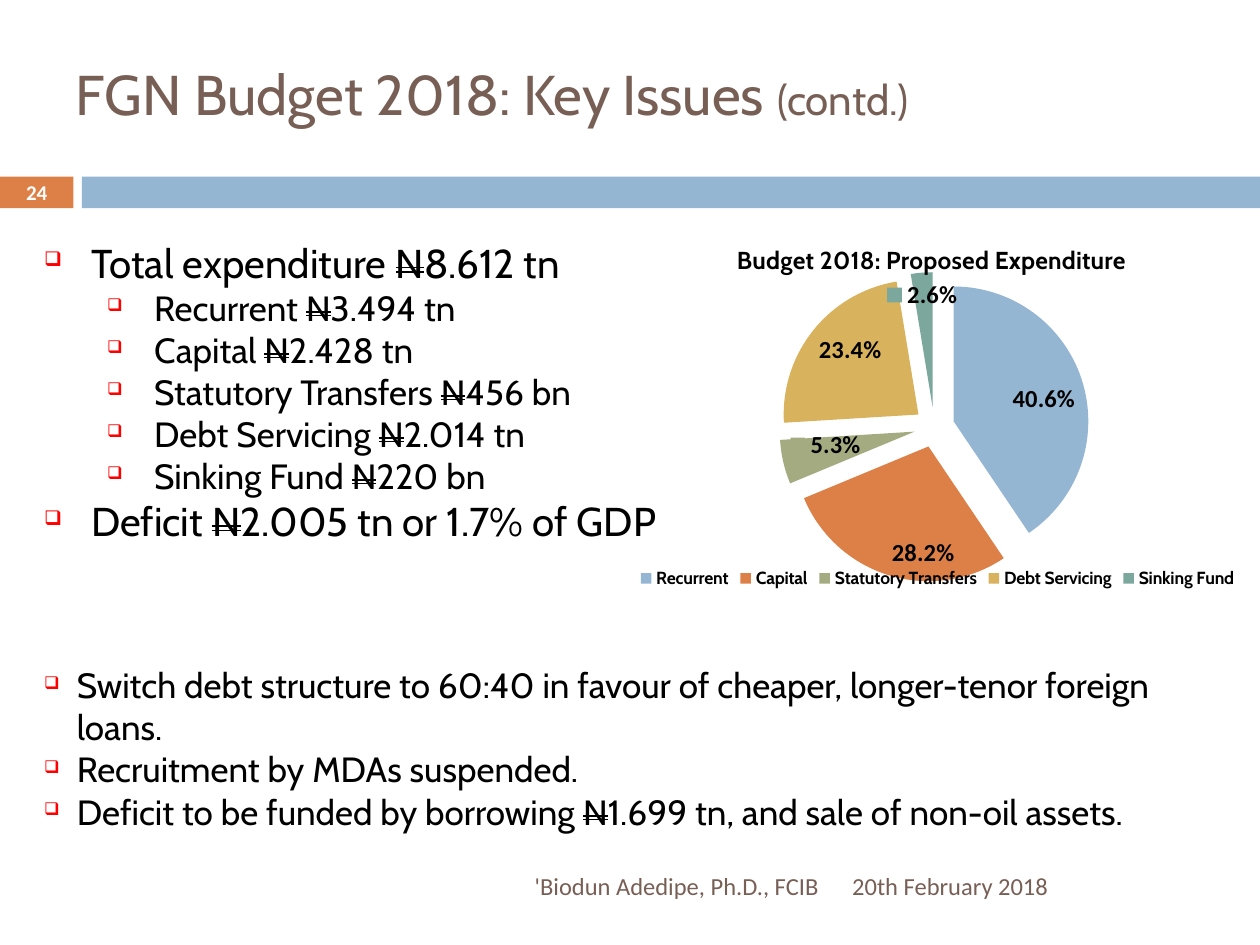
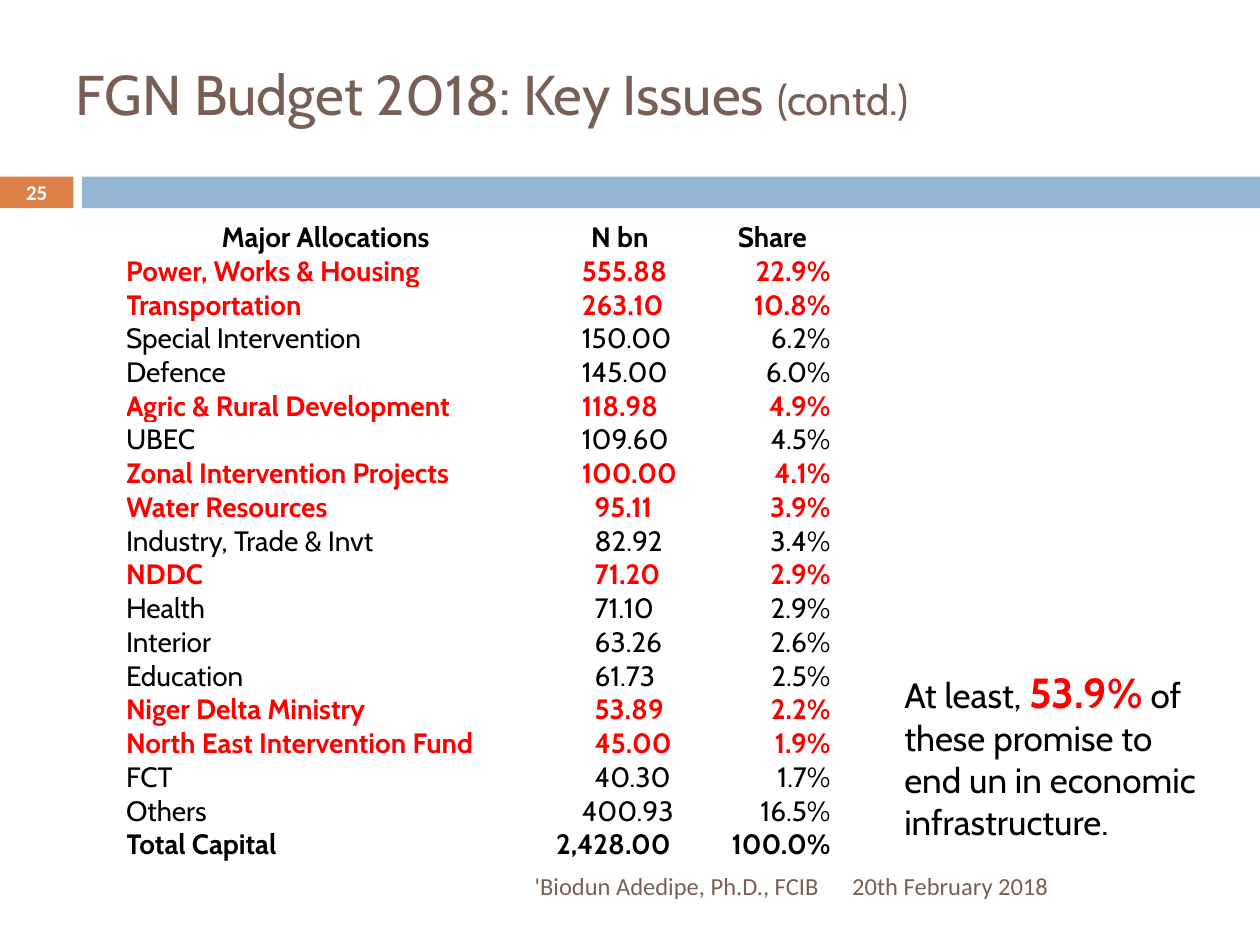
from dataclasses import dataclass

import lxml.etree
import pptx
import pptx.chart.data
import pptx.dml.color
import pptx.enum.chart
import pptx.enum.shapes
import pptx.enum.text
import pptx.oxml.ns
import pptx.util

Cm, Pt = pptx.util.Cm, pptx.util.Pt
qn = pptx.oxml.ns.qn
ALIGN, ANCHOR = pptx.enum.text.PP_ALIGN, pptx.enum.text.MSO_ANCHOR


@dataclass(frozen=True)
class Theme:
    brown: str = "775F55"
    blue: str = "94B6D2"
    orange: str = "DD8047"
    red: str = "FF0000"
    black: str = "000000"
    white: str = "FFFFFF"
    slices: tuple = ("94B6D2", "DD8047", "A5AB81", "D8B25C", "7BA79D")
    text_font: str = "Cabin"
    small_font: str = "Calibri"
    title: int = 32
    large: int = 24
    lead: int = 23
    body: int = 20
    cell: int = 16
    caption: int = 14
    number: int = 12
    legend: int = 10


THEME = Theme()

# ---- Content: a paragraph is a list of runs, a run is (text, overrides) ----
NAIRA = ("N", {"strike": "dblStrike"})
TITLE = [("FGN Budget 2018: Key Issues ", {}), ("(contd.)", {"size": THEME.large})]
AUTHOR = "'Biodun Adedipe, Ph.D., FCIB"
DATE = "20th February 2018"
FIRST_NUMBER = 24

EXPENDITURE = [  # level, label, amount in naira
    (0, "Total expenditure ", "8.612 tn"),
    (1, "Recurrent ", "3.494 tn"),
    (1, "Capital ", "2.428 tn"),
    (1, "Statutory Transfers ", "456 bn"),
    (1, "Debt Servicing ", "2.014 tn"),
    (1, "Sinking Fund ", "220 bn"),
    (0, "Deficit ", "2.005 tn or 1.7% of GDP"),
]
MEASURES = [
    [("Switch debt structure to 60:40 in favour of cheaper, longer-tenor foreign loans.", {})],
    [("Recruitment by MDAs suspended.", {})],
    [("Deficit to be funded by borrowing ", {}), NAIRA,
     ("1.699 tn, and sale of non-oil assets.", {})],
]
CHART_TITLE = "Budget 2018: Proposed Expenditure"
SHARES = {"Recurrent": 0.406, "Capital": 0.282, "Statutory Transfers": 0.053,
          "Debt Servicing": 0.234, "Sinking Fund": 0.026}
KEYED_SLICES = ("Statutory Transfers", "Sinking Fund")

HEADINGS = ("Major Allocations", "N bn", "Share")
ALLOCATIONS = [
    ("Power, Works & Housing", "555.88", "22.9%"),
    ("Transportation", "263.10", "10.8%"),
    ("Special Intervention", "150.00", "6.2%"),
    ("Defence", "145.00", "6.0%"),
    ("Agric & Rural Development", "118.98", "4.9%"),
    ("UBEC", "109.60", "4.5%"),
    ("Zonal Intervention Projects", "100.00", "4.1%"),
    ("Water Resources", "95.11", "3.9%"),
    ("Industry, Trade & Invt", "82.92", "3.4%"),
    ("NDDC", "71.20", "2.9%"),
    ("Health", "71.10", "2.9%"),
    ("Interior", "63.26", "2.6%"),
    ("Education", "61.73", "2.5%"),
    ("Niger Delta Ministry", "53.89", "2.2%"),
    ("North East Intervention Fund", "45.00", "1.9%"),
    ("FCT", "40.30", "1.7%"),
    ("Others", "400.93", "16.5%"),
    ("Total Capital", "2,428.00", "100.0%"),
]
INFRASTRUCTURE = {"Power, Works & Housing", "Transportation", "Agric & Rural Development",
                  "Zonal Intervention Projects", "Water Resources", "NDDC",
                  "Niger Delta Ministry", "North East Intervention Fund"}
CONCLUSION = [
    ("At least, ", {}),
    ("53.9%", {"size": THEME.large, "color": THEME.red, "bold": True}),
    (" of these promise to end un in economic infrastructure.", {}),
]

# ---- Places in centimetres: left, top, width, height ----
NUMBER_BAND = (0, 3.56, 1.48, 0.64)
TITLE_BAND = (1.65, 3.56, 23.75, 0.64)
NUMBER_BOX = (0, 3.54, 1.48, 0.68)
TITLE_BOX = (1.27, 1.07, 22.23, 1.9)
AUTHOR_BOX = (1.7, 17.36, 15.06, 1.01)
DATE_BOX = (16.93, 17.36, 7.41, 1.01)
EXPENDITURE_BOX = (0.64, 4.67, 13, 7.62)
MEASURES_BOX = (0.64, 13.26, 24.13, 3.68)
CHART_BOX = (12.27, 4.65, 13.13, 7.62)
TABLE_AT = (2.54, 4.45)
TABLE_COLUMNS = (8.05, 3.81, 2.34)
ROW_HEIGHT = 0.68
CONCLUSION_BOX = (17.98, 13.31, 6.78, 3.84)


# ---- Helpers ----
def cm(box):
    return [Cm(length) for length in box]


def rgb(color):
    return pptx.dml.color.RGBColor.from_string(color)


def assign(target, values):
    for name, value in values.items():
        setattr(target, name, value)


def set_font(font, size, name=THEME.text_font, color=THEME.black, bold=False):
    assign(font, {"size": Pt(size), "name": name, "bold": bold})
    font.color.rgb = rgb(color)


def write(paragraph, runs, size, align=ALIGN.LEFT, **base):
    paragraph.alignment = align
    for text, overrides in runs:
        run = paragraph.add_run()
        run.text = text
        values = {"size": size, **base, **overrides}
        strike = values.pop("strike", None)
        set_font(run.font, **values)
        if strike:
            run.font._element.set("strike", strike)


def paragraphs(frame, count):
    return [frame.paragraphs[0]] + [frame.add_paragraph() for _ in range(count - 1)]


def text_box(slide, box, anchor=ANCHOR.TOP):
    frame = slide.shapes.add_textbox(*cm(box)).text_frame
    assign(frame, {"word_wrap": True, "vertical_anchor": anchor})
    return frame


def add_bullet(paragraph, left, hanging):
    properties = paragraph._p.get_or_add_pPr()
    properties.set("marL", str(Cm(left)))
    properties.set("indent", str(-Cm(hanging)))
    color = lxml.etree.SubElement(properties, qn("a:buClr"))
    lxml.etree.SubElement(color, qn("a:srgbClr"), val=THEME.red)
    lxml.etree.SubElement(properties, qn("a:buSzPct"), val="50000")
    lxml.etree.SubElement(properties, qn("a:buChar"), char="❑")


def place_in_chart(parent, index, inner=False, **fractions):
    """Give a chart part a manual layout in fractions of the chart."""
    for automatic in parent.findall(qn("c:layout")):
        parent.remove(automatic)
    layout = lxml.etree.Element(qn("c:layout"))
    parent.insert(index, layout)
    manual = lxml.etree.SubElement(layout, qn("c:manualLayout"))
    if inner:
        lxml.etree.SubElement(manual, qn("c:layoutTarget"), val="inner")
    for axis in "xy":
        lxml.etree.SubElement(manual, qn(f"c:{axis}Mode"), val="edge")
    for side, fraction in fractions.items():
        lxml.etree.SubElement(manual, qn(f"c:{side}"), val=str(fraction))


# ---- Shared slide frame ----
def add_framed_slide(deck, number):
    slide = deck.slides.add_slide(deck.slide_layouts[5])
    for box, color in ((NUMBER_BAND, THEME.orange), (TITLE_BAND, THEME.blue)):
        band = slide.shapes.add_shape(pptx.enum.shapes.MSO_SHAPE.RECTANGLE, *cm(box))
        band.shadow.inherit = False
        band.fill.solid()
        band.fill.fore_color.rgb = rgb(color)
        band.line.fill.background()

    title = slide.shapes.title
    assign(title, dict(zip(("left", "top", "width", "height"), cm(TITLE_BOX))))
    assign(title.text_frame, {"vertical_anchor": ANCHOR.TOP, "word_wrap": True,
                              "auto_size": pptx.enum.text.MSO_AUTO_SIZE.NONE})
    write(title.text_frame.paragraphs[0], TITLE, THEME.title, color=THEME.brown)

    for box, text, size, align, color, bold in (
        (DATE_BOX, DATE, THEME.caption, ALIGN.LEFT, THEME.brown, False),
        (AUTHOR_BOX, AUTHOR, THEME.caption, ALIGN.RIGHT, THEME.brown, False),
        (NUMBER_BOX, str(number), THEME.number, ALIGN.CENTER, THEME.white, True),
    ):
        frame = text_box(slide, box, ANCHOR.MIDDLE)
        write(frame.paragraphs[0], [(text, {})], size, align,
              name=THEME.small_font, color=color, bold=bold)
    return slide


# ---- Expenditure slide ----
def add_expenditure_chart(slide):
    data = pptx.chart.data.CategoryChartData(number_format="0.0%")
    data.categories = list(SHARES)
    data.add_series("Series 1", list(SHARES.values()))
    chart = slide.shapes.add_chart(
        pptx.enum.chart.XL_CHART_TYPE.PIE, *cm(CHART_BOX), data).chart
    set_font(chart.font, THEME.legend, THEME.small_font)

    chart.has_title = True
    write(chart.chart_title.text_frame.paragraphs[0], [(CHART_TITLE, {})],
          THEME.caption, ALIGN.CENTER, bold=True)
    chart.has_legend = True
    assign(chart.legend, {"position": pptx.enum.chart.XL_LEGEND_POSITION.BOTTOM,
                          "include_in_layout": False})
    set_font(chart.legend.font, THEME.legend, bold=True)

    # Slices and their labels
    pie = chart.plots[0]
    pie.vary_by_categories = True
    series = pie.series[0]
    inside_end = pptx.enum.chart.XL_LABEL_POSITION.INSIDE_END
    label_font = {"size": THEME.caption, "name": THEME.small_font, "bold": True}
    for index, (category, color) in enumerate(zip(SHARES, THEME.slices)):
        point = series.points[index]
        point.format.fill.solid()
        point.format.fill.fore_color.rgb = rgb(color)
        if category in KEYED_SLICES:
            set_font(point.data_label.font, **label_font)
            point.data_label.position = inside_end
    for label in chart.element.iter(qn("c:dLbl")):
        label.find(qn("c:showLegendKey")).set("val", "1")
    assign(series.data_labels, {"show_value": True, "show_percentage": False,
                                "number_format": "0.0%", "number_format_is_linked": False,
                                "position": inside_end})
    set_font(series.data_labels.font, **label_font)
    explosion = lxml.etree.Element(qn("c:explosion"), val="15")
    next(chart.element.iter(qn("c:ser"))).find(qn("c:tx")).addnext(explosion)

    part = {tag: next(chart.element.iter(qn(f"c:{tag}")))
            for tag in ("title", "legend", "plotArea")}
    place_in_chart(part["title"], 1, x=0.19, y=0.02)
    place_in_chart(part["legend"], 1, x=0.04, y=0.89, w=0.93, h=0.06)
    place_in_chart(part["plotArea"], 0, inner=True, x=0.12, y=0.11, w=0.76, h=0.82)


def add_expenditure_slide(deck, number):
    slide = add_framed_slide(deck, number)
    frame = text_box(slide, EXPENDITURE_BOX)
    for paragraph, (level, label, amount) in zip(
            paragraphs(frame, len(EXPENDITURE)), EXPENDITURE):
        paragraph.level = level
        add_bullet(paragraph, 0.95 + 1.27 * level, 0.95)
        write(paragraph, [(label, {}), NAIRA, (amount, {})],
              THEME.body if level else THEME.lead)

    frame = text_box(slide, MEASURES_BOX)
    for paragraph, runs in zip(paragraphs(frame, len(MEASURES)), MEASURES):
        add_bullet(paragraph, 0.66, 0.66)
        write(paragraph, runs, THEME.body)
    add_expenditure_chart(slide)


# ---- Allocations slide ----
def amount_indent(amount):
    """Shift shorter amounts right so that the decimal points line up."""
    return 1.4 - 0.26 * (len(amount.split(".")[0]) - 2)


def add_allocations_slide(deck, number):
    slide = add_framed_slide(deck, number)
    rows = [HEADINGS] + ALLOCATIONS
    size = (sum(TABLE_COLUMNS), ROW_HEIGHT * len(rows))
    table = slide.shapes.add_table(len(rows), len(HEADINGS), *cm(TABLE_AT + size)).table
    assign(table, {"first_row": False, "horz_banding": False})
    for column, width in zip(table.columns, TABLE_COLUMNS):
        column.width = Cm(width)

    for row_index, values in enumerate(rows):
        heading = row_index == 0
        key = values[0] in INFRASTRUCTURE
        bold = key or heading or row_index == len(rows) - 1
        for column_index, value in enumerate(values):
            cell = table.cell(row_index, column_index)
            indent = amount_indent(value) if column_index == 1 and not heading else 0
            assign(cell, {"margin_left": Cm(indent), "margin_right": 0, "margin_top": 0,
                          "margin_bottom": 0, "vertical_anchor": ANCHOR.BOTTOM})
            cell.fill.background()
            align = ALIGN.CENTER if heading else (ALIGN.LEFT, ALIGN.LEFT, ALIGN.RIGHT)[column_index]
            write(cell.text_frame.paragraphs[0], [(value, {})], THEME.cell, align,
                  color=THEME.red if key else THEME.black, bold=bold)

    write(text_box(slide, CONCLUSION_BOX).paragraphs[0], CONCLUSION, THEME.body)


def main():
    deck = pptx.Presentation()
    assign(deck, {"slide_width": Cm(25.4), "slide_height": Cm(19.05)})
    for number, build in enumerate((add_expenditure_slide, add_allocations_slide), FIRST_NUMBER):
        build(deck, number)
    deck.save("out.pptx")


if __name__ == "__main__":
    main()
